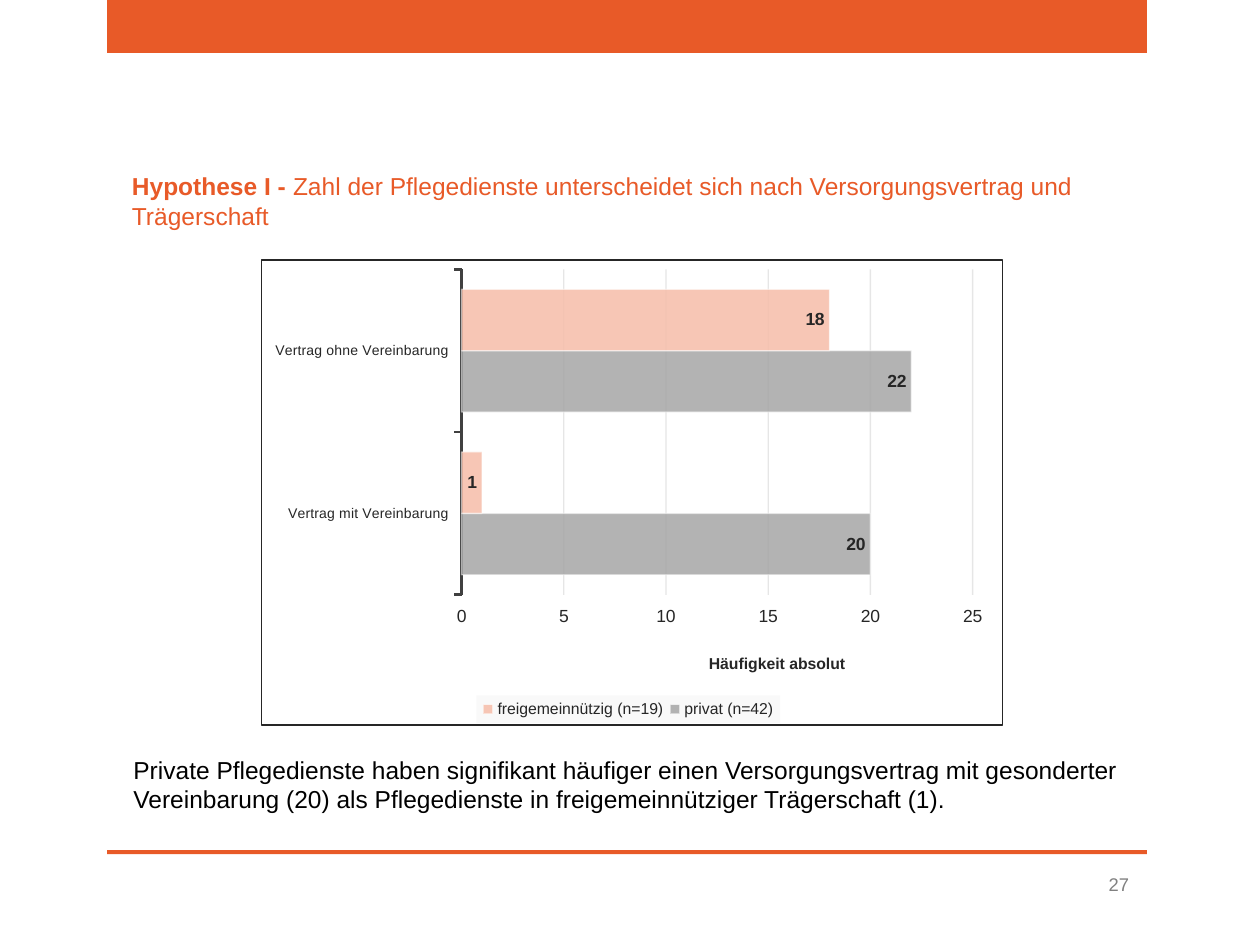
from lxml import etree
from pptx import Presentation
from pptx.chart.data import CategoryChartData
from pptx.dml.color import RGBColor
from pptx.enum.chart import XL_CHART_TYPE, XL_LABEL_POSITION, XL_LEGEND_POSITION, XL_TICK_MARK
from pptx.enum.shapes import MSO_SHAPE
from pptx.enum.text import MSO_ANCHOR, PP_ALIGN
from pptx.oxml import parse_xml
from pptx.oxml.ns import nsdecls, qn
from pptx.util import Cm, Pt

BAR_CHART = XL_CHART_TYPE.BAR_CLUSTERED
INSIDE_END = XL_LABEL_POSITION.INSIDE_END
LEGEND_BOTTOM = XL_LEGEND_POSITION.BOTTOM
TICK_OUTSIDE = XL_TICK_MARK.OUTSIDE
TICK_NONE = XL_TICK_MARK.NONE
RECTANGLE = MSO_SHAPE.RECTANGLE
TOP, MIDDLE = MSO_ANCHOR.TOP, MSO_ANCHOR.MIDDLE
LEFT, RIGHT = PP_ALIGN.LEFT, PP_ALIGN.RIGHT

COLORS = {
    "accent": "E85A28",
    "private": "A6A6A6",
    "charity": "F6BDA9",
    "text": "000000",
    "label": "262626",
    "axis": "404040",
    "grid": "0D0D0D",
    "number": "808080",
    "legend": "F9F9F9",
    "white": "FFFFFF",
}


def color(name):
    return RGBColor.from_string(COLORS[name])


def format_font(font, size=10, tone="label", bold=False, name="Arial"):
    font.name = name
    font.size = Pt(size)
    font.bold = bold
    font.color.rgb = color(tone)


def add_run(paragraph, text, **style):
    run = paragraph.add_run()
    run.text = text
    format_font(run.font, **style)


def format_line(line, tone, width=0.75):
    line.color.rgb = color(tone)
    line.width = Pt(width)


def fade(element, query, percent):
    for tint in element.xpath(query):
        etree.SubElement(tint, qn("a:alpha"), val=str(percent * 1000))


def place(element, index, **fractions):
    for layout in element.findall(qn("c:layout")):
        element.remove(layout)
    layout = etree.Element(qn("c:layout"))
    manual = etree.SubElement(layout, qn("c:manualLayout"))
    if element.tag == qn("c:plotArea"):
        etree.SubElement(manual, qn("c:layoutTarget"), val="inner")
    for key in ("x", "y"):
        etree.SubElement(manual, qn(f"c:{key}Mode"), val="edge")
    for key, value in fractions.items():
        etree.SubElement(manual, qn(f"c:{key}"), val=str(value))
    element.insert(index, layout)


def fill_area(element, tone, border=None):
    outline = "<a:ln><a:noFill/></a:ln>"
    if border:
        outline = (f'<a:ln w="{Pt(0.75)}"><a:solidFill><a:srgbClr val="{COLORS[border]}"/>'
                   "</a:solidFill></a:ln>")
    area = parse_xml(f'<c:spPr {nsdecls("c", "a")}><a:solidFill>'
                     f'<a:srgbClr val="{COLORS[tone]}"/></a:solidFill>{outline}</c:spPr>')
    element.find(qn("c:txPr")).addprevious(area)


class SlideBuilder:
    def __init__(self, slide):
        self.slide = slide

    def bar(self, left, top, width, height):
        shape = self.slide.shapes.add_shape(RECTANGLE, Cm(left), Cm(top), Cm(width), Cm(height))
        shape.shadow.inherit = False
        shape.fill.solid()
        shape.fill.fore_color.rgb = color("accent")
        shape.line.fill.background()

    def text(self, left, top, width, height, runs, align=LEFT, anchor=TOP):
        box = self.slide.shapes.add_textbox(Cm(left), Cm(top), Cm(width), Cm(height))
        frame = box.text_frame
        frame.word_wrap = True
        frame.vertical_anchor = anchor
        paragraph = frame.paragraphs[0]
        paragraph.alignment = align
        for text, style in runs:
            add_run(paragraph, text, **style)

    def bar_chart(self, left, top, width, height, categories, series_rows, axis_title):
        data = CategoryChartData()
        data.categories = categories
        for name, values, _ in series_rows:
            data.add_series(name, values)
        chart = self.slide.shapes.add_chart(
            BAR_CHART, Cm(left), Cm(top), Cm(width), Cm(height), data).chart
        format_font(chart.font, tone="text", name="TeX Gyre Schola")
        chart.has_title = False
        fill_area(chart.element, "white", border="label")
        place(chart.element.chart.plotArea, 0, x=0.27, y=0.02, w=0.69, h=0.7)
        self.format_series(chart.plots[0], [tone for _, _, tone in series_rows])
        self.format_axes(chart, axis_title)
        self.format_legend(chart)

    def format_series(self, plot, tones):
        plot.gap_width = 65
        plot.overlap = 0
        plot.vary_by_categories = False
        for series, tone in zip(plot.series, tones):
            series.invert_if_negative = False
            series.format.fill.solid()
            series.format.fill.fore_color.rgb = color(tone)
            format_line(series.format.line, "white")
            fade(series._element, "c:spPr/a:solidFill/a:srgbClr", 85)
            fade(series._element, "c:spPr/a:ln/a:solidFill/a:srgbClr", 50)
            labels = series.data_labels
            labels.show_value = True
            labels.position = INSIDE_END
            format_font(labels.font, bold=True)

    def format_axes(self, chart, axis_title):
        category_axis, value_axis = chart.category_axis, chart.value_axis
        for axis, size in ((category_axis, 8), (value_axis, 10)):
            axis.major_tick_mark = TICK_OUTSIDE
            axis.minor_tick_mark = TICK_NONE
            format_font(axis.tick_labels.font, size=size)
        format_line(category_axis.format.line, "axis", 1.5)
        value_axis.format.line.fill.background()
        value_axis.minimum_scale, value_axis.maximum_scale = 0, 25
        value_axis.major_unit = 5
        format_line(value_axis.major_gridlines.format.line, "grid")
        fade(chart.element, ".//c:majorGridlines//a:srgbClr", 10)
        title = value_axis.axis_title
        add_run(title.text_frame.paragraphs[0], axis_title, size=9, bold=True)
        place(title._element, 1, x=0.6, y=0.84)

    def format_legend(self, chart):
        chart.has_legend = True
        legend = chart.legend
        legend.position = LEGEND_BOTTOM
        legend.include_in_layout = False
        format_font(legend.font, size=9)
        place(legend._element, 1, x=0.29, y=0.94, w=0.41, h=0.06)
        fill_area(legend._element, "legend")


def main():
    presentation = Presentation()
    presentation.slide_width, presentation.slide_height = Cm(25.4), Cm(19.05)
    builder = SlideBuilder(presentation.slides.add_slide(presentation.slide_layouts[6]))
    builder.bar(2.16, 0, 20.96, 1.07)
    builder.bar(2.16, 17.14, 20.96, 0.08)
    builder.text(20.9, 17.32, 2.11, 1.02, [("27", {"size": 10.5, "tone": "number"})],
                 align=RIGHT, anchor=MIDDLE)
    builder.bar_chart(
        5.26, 5.23, 14.96, 9.4,
        ["Vertrag mit Vereinbarung", "Vertrag ohne Vereinbarung"],
        [("privat (n=42)", (20, 22), "private"),
         ("freigemeinnützig (n=19)", (1, 18), "charity")],
        "Häufigkeit absolut")
    heading = {"size": 14, "tone": "accent"}
    builder.text(2.41, 3.33, 20.6, 1.45, [
        ("Hypothese I - ", {**heading, "bold": True}),
        ("Zahl der Pflegedienste unterscheidet sich nach Versorgungsvertrag und Trägerschaft",
         heading)])
    builder.text(2.44, 15.09, 20.42, 1.45, [
        ("Private Pflegedienste haben signifikant häufiger einen Versorgungsvertrag mit "
         "gesonderter Vereinbarung (20) als Pflegedienste in freigemeinnütziger "
         "Trägerschaft (1).", {"size": 14, "tone": "text"})])
    presentation.save("out.pptx")


if __name__ == "__main__":
    main()
